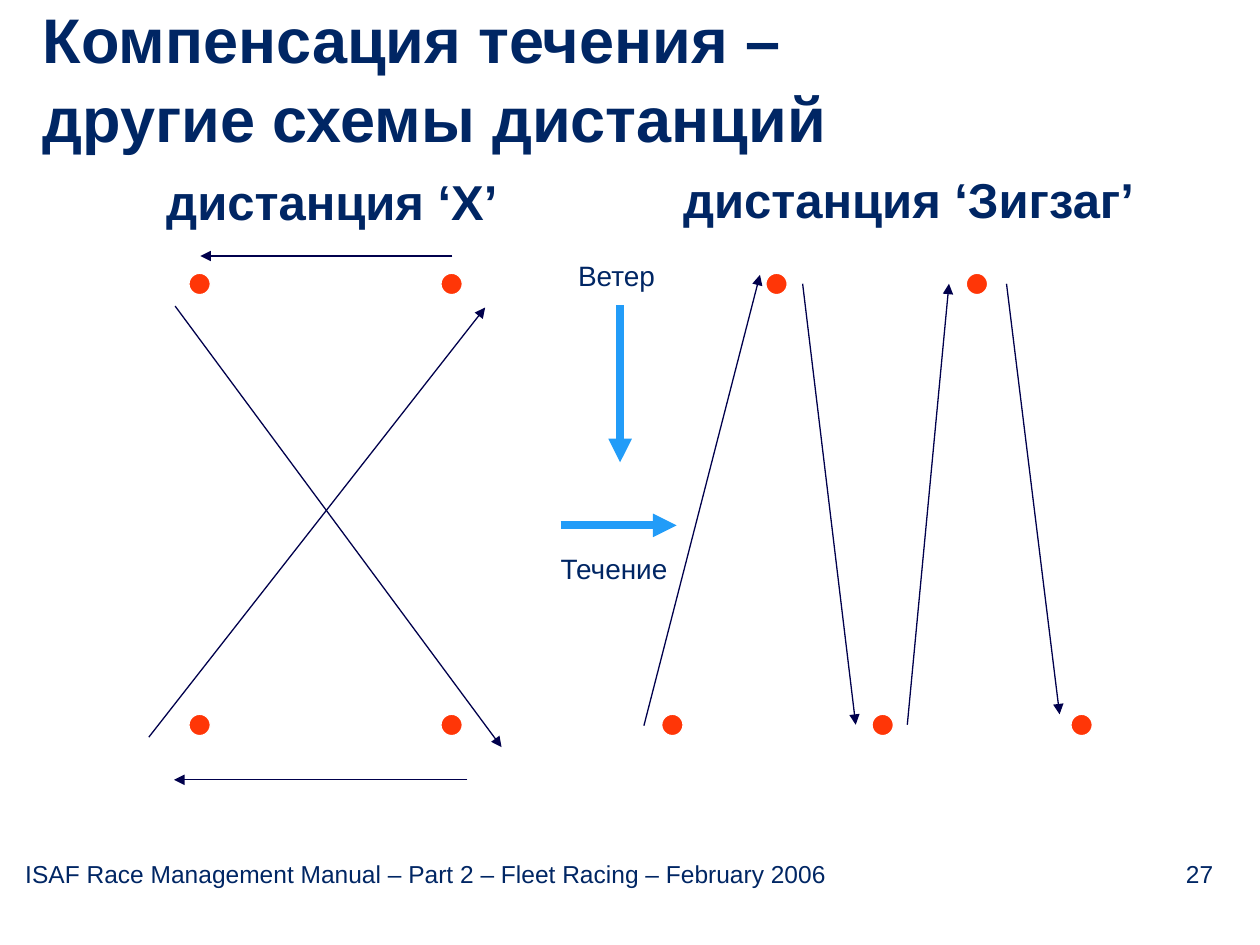
from dataclasses import dataclass

from lxml import etree
from pptx import Presentation
from pptx.dml.color import RGBColor
from pptx.enum import shapes, text
from pptx.oxml.ns import qn
from pptx.util import Cm, Pt


@dataclass(frozen=True)
class Theme:
    font: str = "Arial"
    ink: str = "002664"
    route: str = "00004C"
    flow: str = "229CF8"
    mark: str = "FF3607"
    outline: str = "FFFFFF"
    title: int = 36
    heading: int = 28
    label: int = 16
    footer: int = 14
    thin: float = 0.75
    thick: float = 4.5


class CourseSlide:
    MARK_SIZE = 0.43

    def __init__(self, slide, theme):
        self.slide = slide
        self.theme = theme

    def add_text(self, words, left, top, width, height, size, bold=False,
                 align=text.PP_ALIGN.CENTER):
        box = self.slide.shapes.add_textbox(
            Cm(left), Cm(top), Cm(width), Cm(height))
        frame = box.text_frame
        frame.word_wrap = True
        frame.text = words
        paragraph = frame.paragraphs[0]
        paragraph.alignment = align
        for run in paragraph.runs:
            run.font.name = self.theme.font
            run.font.size = Pt(size)
            run.font.bold = bold
            run.font.color.rgb = RGBColor.from_string(self.theme.ink)
        return frame

    def title(self, words):
        frame = self.add_text(words, 0.61, -0.13, 24, 3.33, self.theme.title,
                              True, text.PP_ALIGN.LEFT)
        frame.vertical_anchor = text.MSO_ANCHOR.MIDDLE
        frame.paragraphs[0].line_spacing = 1.05

    def heading(self, words, left, top, width):
        self.add_text(words, left, top, width, 1.45, self.theme.heading, True)

    def label(self, words, left, top):
        self.add_text(words, left, top, 2.92, 0.94, self.theme.label)

    def footer(self, source, number):
        """Source on the left, page number against a right tab stop."""
        frame = self.add_text(f"{source}\t{number}", 0.51, 17.32, 24.41, 0.58,
                              self.theme.footer, align=text.PP_ALIGN.LEFT)
        frame.margin_left = frame.margin_right = 0
        frame.margin_top = frame.margin_bottom = 0
        properties = frame.paragraphs[0]._p.get_or_add_pPr()
        stops = etree.SubElement(properties, qn("a:tabLst"))
        etree.SubElement(stops, qn("a:tab"), pos=str(Cm(23.95)), algn="r")

    def marks(self, columns, top):
        for left in columns:
            mark = self.slide.shapes.add_shape(
                shapes.MSO_SHAPE.OVAL, Cm(left), Cm(top),
                Cm(self.MARK_SIZE), Cm(self.MARK_SIZE))
            mark.shadow.inherit = False
            mark.fill.solid()
            mark.fill.fore_color.rgb = RGBColor.from_string(self.theme.mark)
            mark.line.color.rgb = RGBColor.from_string(self.theme.outline)
            mark.line.width = Pt(self.theme.thin)

    def arrow(self, start, end, color, width):
        arrow = self.slide.shapes.add_connector(
            shapes.MSO_CONNECTOR.STRAIGHT, *map(Cm, start + end))
        arrow.line.color.rgb = RGBColor.from_string(color)
        arrow.line.width = Pt(width)
        properties = arrow._element.spPr
        etree.SubElement(properties.find(qn("a:ln")), qn("a:tailEnd"),
                         type="triangle")
        etree.SubElement(properties, qn("a:effectLst"))

    def leg(self, start, end):
        self.arrow(start, end, self.theme.route, self.theme.thin)

    def flow(self, start, end):
        self.arrow(start, end, self.theme.flow, self.theme.thick)


def main():
    deck = Presentation()
    deck.slide_width, deck.slide_height = Cm(25.4), Cm(19.05)
    course = CourseSlide(deck.slides.add_slide(deck.slide_layouts[6]), Theme())
    windward, leeward = 5.51, 14.4

    course.footer(
        "ISAF Race Management Manual – Part 2 – Fleet Racing – February 2006",
        27)
    course.title("Компенсация течения –\vдругие схемы дистанций")

    course.heading("дистанция ‘X’", 0.71, 3.33, 11.96)
    for top in (windward, leeward):
        course.marks((3.81, 8.89), top)
    x_legs = (
        ((9.42, 15.72), (3.51, 15.72)),
        ((3, 14.86), (9.78, 6.2)),
        ((9.12, 5.16), (4.04, 5.16)),
        ((3.53, 6.17), (10.11, 15.06)),
    )

    course.heading("дистанция ‘Зигзаг’", 13.31, 3.3, 10.01)
    course.marks((15.44, 19.48), windward)
    course.marks((13.34, 17.58, 21.59), leeward)
    zigzag_legs = (
        ((12.98, 14.63), (15.32, 5.54)),
        ((16.18, 5.72), (17.25, 14.61)),
        ((18.29, 14.61), (19.13, 5.72)),
        ((20.29, 5.72), (21.36, 14.4)),
    )
    for start, end in x_legs + zigzag_legs:
        course.leg(start, end)

    course.label("Ветер", 10.97, 5.08)
    course.flow((12.5, 6.15), (12.5, 9.32))
    course.label("Течение", 10.92, 11)
    course.flow((11.3, 10.59), (13.64, 10.59))

    deck.save("out.pptx")


if __name__ == "__main__":
    main()
